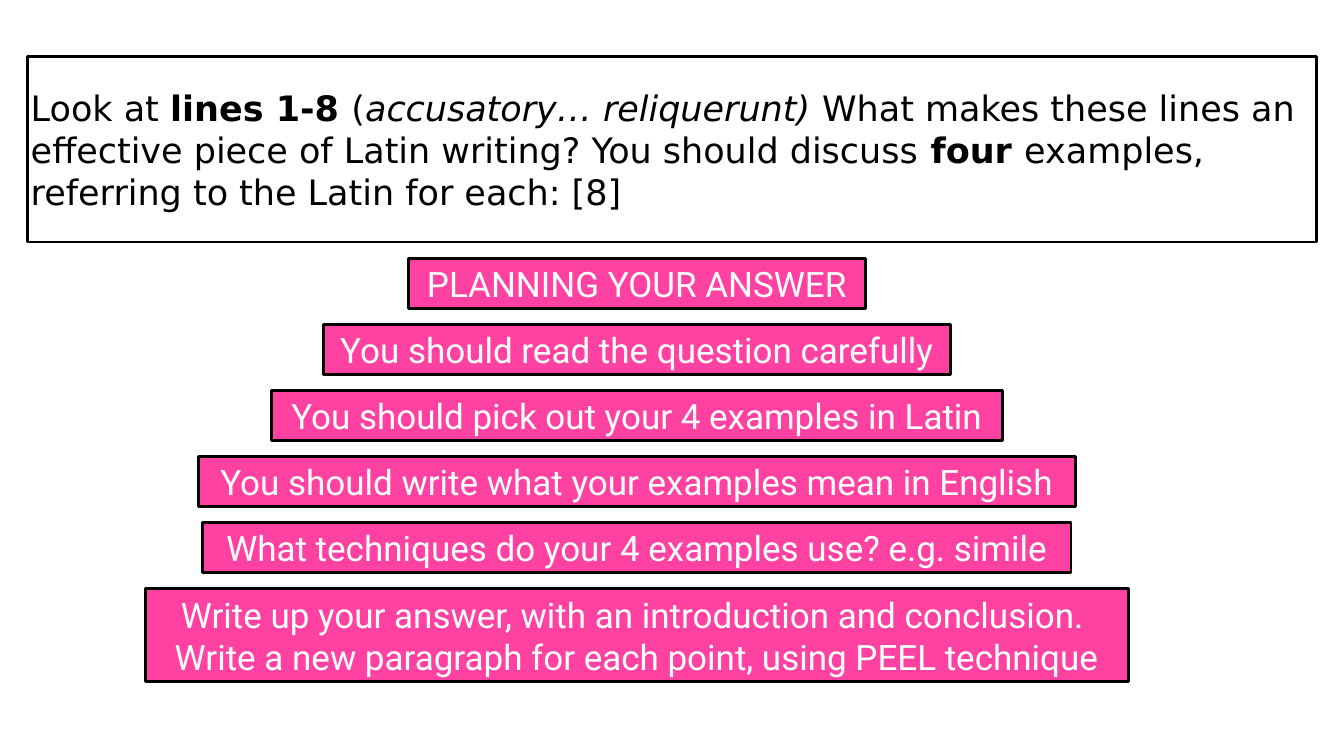
from pptx import Presentation
from pptx.dml.color import RGBColor
from pptx.enum.shapes import MSO_SHAPE
from pptx.enum.text import MSO_ANCHOR, MSO_AUTO_SIZE, PP_ALIGN
from pptx.util import Inches, Pt

BLACK = RGBColor(0x00, 0x00, 0x00)
WHITE = RGBColor(0xFF, 0xFF, 0xFF)
PINK = RGBColor(0xFF, 0x42, 0xA1)

QUESTION = [
    ("Look at ", False, False),
    ("lines 1-8 ", True, False),
    ("(", False, False),
    ("accusatory… reliquerunt) ", False, True),
    ("What makes these lines an effective piece of Latin writing? "
     "You should discuss ", False, False),
    ("four ", True, False),
    ("examples, referring to the Latin for each: [8]", False, False),
]

STEPS = [
    (9.08, ["PLANNING YOUR ANSWER"]),
    (12.43, ["You should read the question carefully"]),
    (14.51, ["You should pick out your 4 examples in Latin"]),
    (17.39, ["You should write what your examples mean in English"]),
    (17.23, ["What techniques do your 4 examples use? e.g. simile"]),
    (19.52, ["Write up your answer, with an introduction and conclusion. ",
             "Write a new paragraph for each point, using PEEL technique"]),
]
STEP_PITCH = 1.31
LINE_HEIGHT = 0.85
STEP_PADDING = 0.14


def add_box(slide, left, top, width, height, fill=None):
    box = slide.shapes.add_shape(
        MSO_SHAPE.RECTANGLE, Inches(left), Inches(top), Inches(width), Inches(height))
    box.shadow.inherit = False
    if fill is None:
        box.fill.background()
    else:
        box.fill.solid()
        box.fill.fore_color.rgb = fill
    box.line.color.rgb = BLACK
    box.line.width = Pt(4)
    frame = box.text_frame
    frame.margin_left = frame.margin_right = Inches(0.06)
    frame.margin_top = frame.margin_bottom = Inches(0.06)
    frame.vertical_anchor = MSO_ANCHOR.MIDDLE
    frame.word_wrap = False
    frame.auto_size = MSO_AUTO_SIZE.SHAPE_TO_FIT_TEXT
    return frame


def style_paragraph(paragraph, font_name, color, alignment):
    paragraph.alignment = alignment
    paragraph.font.name = font_name
    paragraph.font.size = Pt(50)
    paragraph.font.color.rgb = color


def add_question(slide, left, top, width, height):
    paragraph = add_box(slide, left, top, width, height).paragraphs[0]
    style_paragraph(paragraph, "DejaVu Sans", BLACK, PP_ALIGN.LEFT)
    paragraph.space_before = Pt(12)
    for text, bold, italic in QUESTION:
        run = paragraph.add_run()
        run.text = text
        run.font.bold = bold
        run.font.italic = italic


def add_steps(slide, center, top):
    for row, (width, lines) in enumerate(STEPS):
        height = STEP_PADDING + LINE_HEIGHT * len(lines)
        frame = add_box(slide, center - width / 2, top + row * STEP_PITCH,
                        width, height, PINK)
        frame.text = "\n".join(lines)
        for paragraph in frame.paragraphs:
            style_paragraph(paragraph, "Roboto", WHITE, PP_ALIGN.CENTER)


def main():
    presentation = Presentation()
    presentation.slide_width = Inches(26.67)
    presentation.slide_height = Inches(15)
    slide = presentation.slides.add_slide(presentation.slide_layouts[6])
    add_question(slide, 0.55, 1.12, 25.58, 3.68)
    add_steps(slide, center=12.64, top=5.13)
    presentation.save("out.pptx")


if __name__ == "__main__":
    main()
